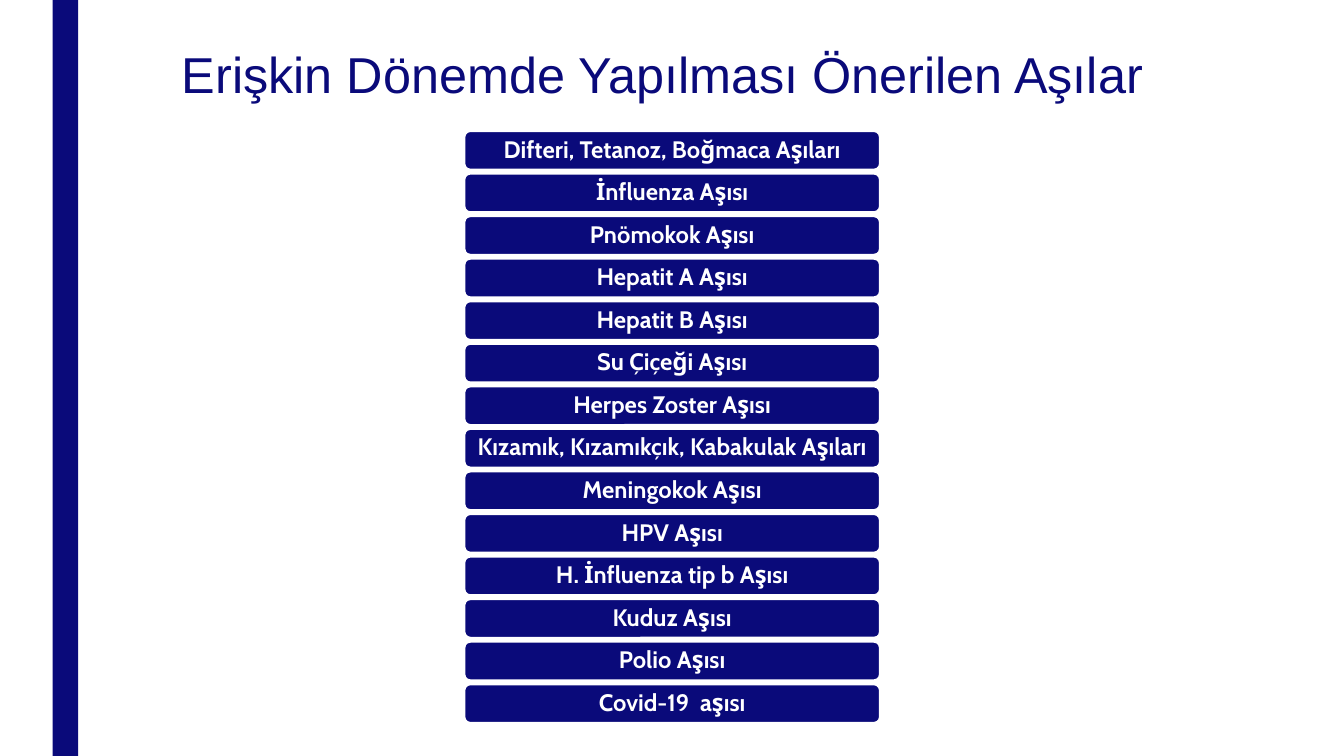
from pptx import Presentation
from pptx import util as u
from pptx.dml.color import RGBColor
from pptx.enum import shapes, text

NAVY = RGBColor(0x0A, 0x0A, 0x7A)
WHITE = RGBColor(0xFF, 0xFF, 0xFF)
TITLE = "Erişkin Dönemde Yapılması Önerilen Aşılar"
VACCINES = [
    "Difteri, Tetanoz, Boğmaca Aşıları",
    "İnfluenza Aşısı",
    "Pnömokok Aşısı",
    "Hepatit A Aşısı",
    "Hepatit B Aşısı",
    "Su Çiçeği Aşısı",
    "Herpes Zoster Aşısı",
    "Kızamık, Kızamıkçık, Kabakulak Aşıları",
    "Meningokok Aşısı",
    "HPV Aşısı",
    "H. İnfluenza tip b Aşısı",
    "Kuduz Aşısı",
    "Polio Aşısı",
    "Covid-19  aşısı",
]
FIRST_TOP, LAST_TOP = u.Cm(3.28), u.Cm(17.22)


def write(p, words, font, size, color, bold=False):
    """Add one formatted run to a paragraph."""
    r = p.add_run()
    r.text = words
    r.font.name = font
    r.font.size = u.Pt(size)
    r.font.bold = bold
    r.font.color.rgb = color


def add_box(s, kind, left, top, width, height):
    """Add a navy shape without outline or shadow."""
    sp = s.shapes.add_shape(kind, left, top, width, height)
    sp.shadow.inherit = False
    sp.fill.solid()
    sp.fill.fore_color.rgb = NAVY
    sp.line.fill.background()
    return sp


def add_title(s):
    """Add the slide heading."""
    sp = s.shapes.add_textbox(u.Cm(2.34), u.Cm(0.81), u.Cm(29.21), u.Cm(3.66))
    tf = sp.text_frame
    tf.word_wrap = True
    tf.margin_left = u.Cm(2.24)
    tf.margin_top = u.Cm(0.46)
    p = tf.paragraphs[0]
    p.line_spacing = 0.89
    write(p, TITLE, "Arial", 36, NAVY)


def add_vaccine(s, top, name):
    """Add one rounded bar with a vaccine name."""
    sp = add_box(s, shapes.MSO_SHAPE.ROUNDED_RECTANGLE,
                 u.Cm(11.68), top, u.Cm(10.52), u.Cm(1.02))
    sp.line.color.rgb = WHITE
    sp.line.width = u.Pt(2.75)
    tf = sp.text_frame
    tf.word_wrap = True
    tf.vertical_anchor = text.MSO_ANCHOR.MIDDLE
    tf.margin_left = tf.margin_right = u.Cm(0.18)
    tf.margin_top = tf.margin_bottom = u.Cm(0.1)
    p = tf.paragraphs[0]
    p.alignment = text.PP_ALIGN.CENTER
    p.line_spacing = 0.9
    write(p, name, "Cabin", 17, WHITE, bold=True)


def main():
    """Build the vaccine list slide."""
    prs = Presentation()
    prs.slide_width, prs.slide_height = u.Cm(33.87), u.Cm(19.05)
    s = prs.slides.add_slide(prs.slide_layouts[6])
    add_box(s, shapes.MSO_SHAPE.RECTANGLE,
            u.Cm(1.33), 0, u.Cm(0.64), prs.slide_height)
    add_title(s)
    step = (LAST_TOP - FIRST_TOP) / (len(VACCINES) - 1)
    for i, name in enumerate(VACCINES):
        add_vaccine(s, round(FIRST_TOP + i * step), name)
    prs.save("out.pptx")


if __name__ == "__main__":
    main()
